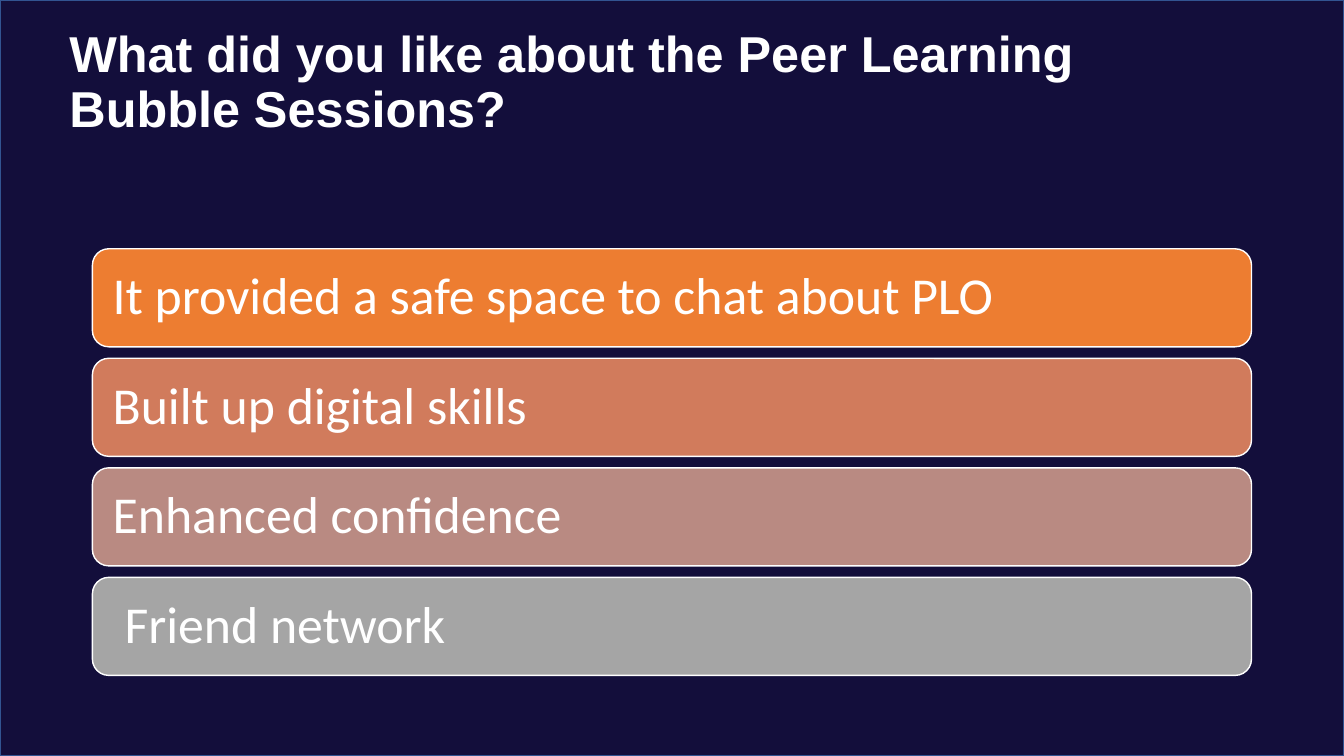
from pptx import Presentation
from pptx.dml.color import RGBColor
from pptx.enum.shapes import MSO_SHAPE
from pptx.enum.text import MSO_ANCHOR, MSO_AUTO_SIZE, PP_ALIGN
from pptx.util import Cm, Pt

RECTANGLE = MSO_SHAPE.RECTANGLE
ROUNDED = MSO_SHAPE.ROUNDED_RECTANGLE
MIDDLE, BOTTOM = MSO_ANCHOR.MIDDLE, MSO_ANCHOR.BOTTOM
LEFT = PP_ALIGN.LEFT
NO_AUTOFIT = MSO_AUTO_SIZE.NONE

WIDTH, HEIGHT = 33.87, 19.05
NAVY, NAVY_EDGE, WHITE = "130E3B", "325491", "FFFFFF"

# Answer, bar colour, extra indent in cm
ANSWERS = [
    ("It provided a safe space to chat about PLO", "ED7D31", 0),
    ("Built up digital skills", "D17B5C", 0),
    ("Enhanced confidence", "B98A82", 0),
    ("Friend network", "A5A5A5", 0.3),
]


def color(hex_value):
    return RGBColor.from_string(hex_value)


def write(holder, text, *, font, size, bold=False, anchor=MIDDLE,
          inset_x=0.25, inset_y=0.13, indent=0):
    frame = holder.text_frame
    frame.word_wrap = True
    frame.auto_size = NO_AUTOFIT
    frame.vertical_anchor = anchor
    frame.margin_left = Cm(inset_x + indent)
    frame.margin_right = Cm(inset_x)
    frame.margin_top = frame.margin_bottom = Cm(inset_y)
    paragraph = frame.paragraphs[0]
    paragraph.text = text
    paragraph.alignment = LEFT
    paragraph.line_spacing = 0.9
    paragraph.space_before = Pt(0)
    paragraph.font.name = font
    paragraph.font.size = Pt(size)
    paragraph.font.bold = bold
    paragraph.font.color.rgb = color(WHITE)


def add_panel(slide, kind, box, fill, edge):
    panel = slide.shapes.add_shape(kind, *map(Cm, box))
    panel.shadow.inherit = False
    panel.fill.solid()
    panel.fill.fore_color.rgb = color(fill)
    panel.line.color.rgb = color(edge)
    panel.line.width = Pt(1)
    return panel


def add_backdrop(slide, box):
    backdrop = add_panel(slide, RECTANGLE, box, NAVY, NAVY_EDGE)
    # Send behind the title
    slide.shapes._spTree.insert(2, backdrop._element)


def add_question(slide, box):
    question = slide.shapes.title
    question.left, question.top, question.width, question.height = map(Cm, box)
    write(question, "What did you like about the Peer Learning Bubble Sessions?",
          font="Arial", size=36, bold=True, anchor=BOTTOM)


def add_answers(slide, box, gap=0.29):
    left, top, width, height = box
    bar_height = (height - gap * (len(ANSWERS) - 1)) / len(ANSWERS)
    for row, (answer, fill, indent) in enumerate(ANSWERS):
        bar_top = top + row * (bar_height + gap)
        bar = add_panel(slide, ROUNDED, (left, bar_top, width, bar_height),
                        fill, WHITE)
        write(bar, answer, font="Calibri", size=37,
              inset_x=0.39, inset_y=0.39, indent=indent)


def main():
    deck = Presentation()
    deck.slide_width, deck.slide_height = Cm(WIDTH), Cm(HEIGHT)
    slide = deck.slides.add_slide(deck.slide_layouts[5])

    # Background, question, then the stack of answers
    add_backdrop(slide, (0, 0, WIDTH, HEIGHT))
    add_question(slide, (1.5, 0.69, 26.9, 2.92))
    add_answers(slide, (2.33, 6.27, 29.21, 10.75))

    deck.save("out.pptx")


if __name__ == "__main__":
    main()
